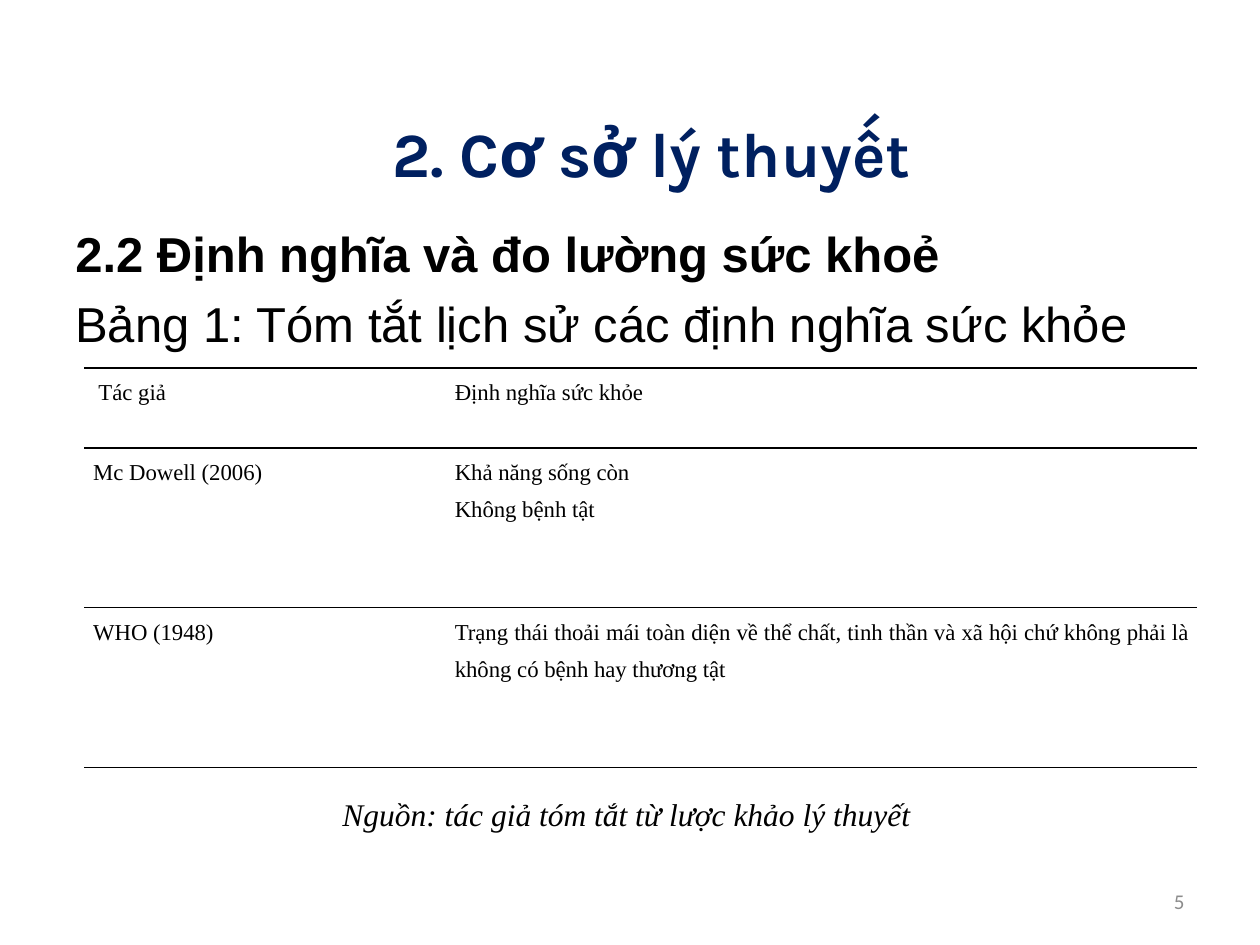
from dataclasses import dataclass

from lxml.etree import SubElement
from pptx import Presentation
from pptx.dml.color import RGBColor
from pptx.enum.text import MSO_ANCHOR as Anchor, PP_ALIGN as Align
from pptx.oxml.ns import qn
from pptx.util import Inches, Pt


@dataclass(frozen=True)
class Theme:
    navy: str = "002060"
    black: str = "000000"
    white: str = "FFFFFF"
    gray: str = "8C8C8C"
    title_font: str = "Karla"
    body_font: str = "Arial"
    table_font: str = "Times New Roman"
    number_font: str = "Calibri"
    title_size: int = 36
    body_size: int = 28
    source_size: int = 18
    table_size: int = 13
    number_size: int = 12


THEME = Theme()
ROWS = [
    (" Tác giả", ["Định nghĩa sức khỏe"]),
    ("Mc Dowell (2006)", ["Khả năng sống còn ", "Không bệnh tật"]),
    ("WHO (1948)", ["Trạng thái thoải mái toàn diện về thể chất, tinh thần và xã hội "
                    "chứ không phải là không có bệnh hay thương tật"]),
]


def write(paragraph, text, font, size, color=THEME.black, bold=False, italic=False,
          align=Align.LEFT, line_spacing=None, space_before=0):
    paragraph.alignment = align
    paragraph.line_spacing = line_spacing
    paragraph.space_before = Pt(space_before)
    run = paragraph.add_run()
    run.text = text
    run.font.name = font
    run.font.size = Pt(size)
    run.font.bold = bold
    run.font.italic = italic
    run.font.color.rgb = RGBColor.from_string(color)


def add_frame(slide, box, anchor=Anchor.TOP, wrap=True):
    frame = slide.shapes.add_textbox(*map(Inches, box)).text_frame
    frame.word_wrap = wrap
    frame.vertical_anchor = anchor
    return frame


def add_title(slide, box):
    frame = add_frame(slide, box, Anchor.MIDDLE)
    write(frame.paragraphs[0], "2. Cơ sở lý thuyết", THEME.title_font, THEME.title_size,
          THEME.navy, bold=True, align=Align.CENTER)


def add_headings(slide, box):
    frame = add_frame(slide, box)
    frame.margin_top = Inches(0.1)
    write(frame.paragraphs[0], "2.2 Định nghĩa và đo lường sức khoẻ",
          THEME.body_font, THEME.body_size, bold=True)
    write(frame.add_paragraph(), "Bảng 1: Tóm tắt lịch sử các định nghĩa sức khỏe",
          THEME.body_font, THEME.body_size, space_before=6.5)


def set_borders(cell):
    """Rules above and below the cell, none at its sides."""
    properties = cell._tc.get_or_add_tcPr()
    for position, side in enumerate(("lnL", "lnR", "lnT", "lnB")):
        line = properties.makeelement(qn(f"a:{side}"), {"w": str(Pt(1))})
        properties.insert(position, line)
        if side in ("lnT", "lnB"):
            fill = SubElement(line, qn("a:solidFill"))
            SubElement(fill, qn("a:srgbClr"), val=THEME.black)
        else:
            SubElement(line, qn("a:noFill"))


def fill_cell(cell, lines):
    cell.fill.solid()
    cell.fill.fore_color.rgb = RGBColor.from_string(THEME.white)
    cell.margin_left = cell.margin_right = Inches(0.07)
    cell.margin_top = cell.margin_bottom = 0
    set_borders(cell)
    frame = cell.text_frame
    for index, text in enumerate(lines):
        paragraph = frame.add_paragraph() if index else frame.paragraphs[0]
        write(paragraph, text, THEME.table_font, THEME.table_size,
              align=Align.JUSTIFY, line_spacing=1.5)


def add_definitions(slide, box):
    left, top, width, height = box
    table = slide.shapes.add_table(len(ROWS), 2, *map(Inches, box)).table
    table.first_row = table.horz_banding = False
    author_width = 2.87
    table.columns[0].width = Inches(author_width)
    table.columns[1].width = Inches(width - author_width)
    # The header is half as high as each of the other rows
    for row, share in zip(table.rows, (1, 2, 2)):
        row.height = Inches(height * share / 5)
    for row, (author, definition) in zip(table.rows, ROWS):
        fill_cell(row.cells[0], [author])
        fill_cell(row.cells[1], definition)


def add_source(slide, box):
    frame = add_frame(slide, box, wrap=False)
    write(frame.paragraphs[0], "Nguồn: tác giả tóm tắt từ lược khảo lý thuyết",
          THEME.table_font, THEME.source_size, italic=True,
          align=Align.JUSTIFY, line_spacing=1.5)


def add_number(slide, box):
    frame = add_frame(slide, box, Anchor.MIDDLE)
    write(frame.paragraphs[0], "5", THEME.number_font, THEME.number_size,
          THEME.gray, align=Align.RIGHT)


def main():
    presentation = Presentation()
    presentation.slide_width = Inches(10)
    presentation.slide_height = Inches(7.5)
    slide = presentation.slides.add_slide(presentation.slide_layouts[6])

    # Title and headings
    add_title(slide, (0.67, 0.83, 9, 0.75))
    add_headings(slide, (0.5, 1.67, 9, 5.42))
    # Table with its source
    add_definitions(slide, (0.67, 2.92, 8.83, 3.17))
    add_source(slide, (2.62, 6.11, 4.76, 0.56))
    # Footer
    add_number(slide, (7.17, 6.95, 2.33, 0.4))

    presentation.save("out.pptx")


if __name__ == "__main__":
    main()
